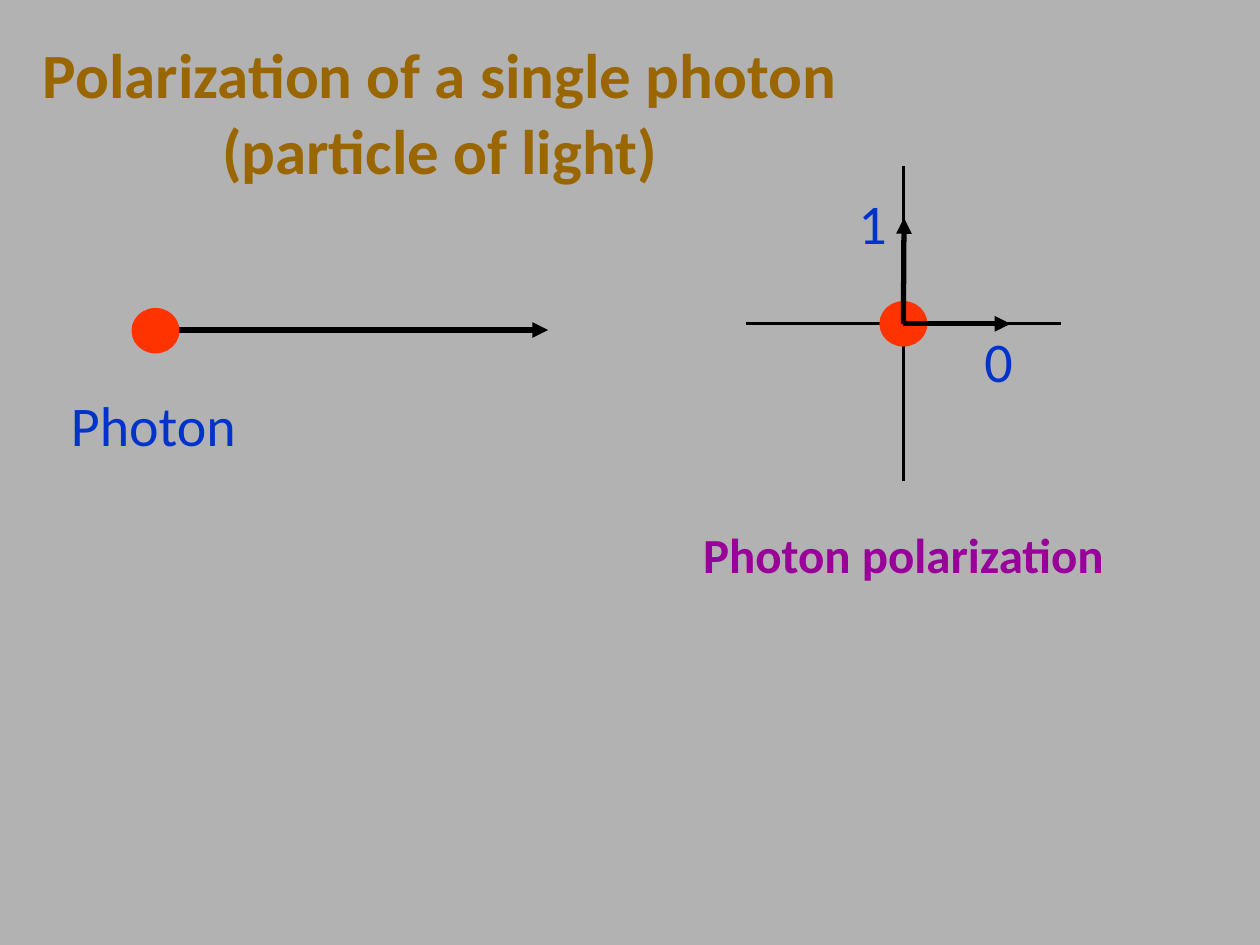
from dataclasses import dataclass

from pptx import Presentation
from pptx.dml.color import RGBColor
from pptx.enum.shapes import MSO_CONNECTOR, MSO_SHAPE
from pptx.enum.text import MSO_ANCHOR, MSO_AUTO_SIZE, PP_ALIGN
from pptx.oxml.ns import qn
from pptx.util import Inches, Pt
from lxml.etree import SubElement


@dataclass(frozen=True)
class Theme:
    font: str = "Calibri"
    back: str = "B2B2B2"
    head: str = "996600"
    label: str = "0033CC"
    note: str = "990099"
    dot: str = "FF3300"
    ink: str = "000000"
    head_size: int = 36
    label_size: int = 32
    note_size: int = 28
    thin: float = 1.5
    rim: float = 2.25
    thick: float = 3


THEME = Theme()
WIDE, HIGH = 10, 7.5


@dataclass(frozen=True)
class Box:
    x: float
    y: float
    w: float
    h: float

    def area(self, x, y, w, h):
        """Box at the given shares of this one."""
        return Box(self.x + x * self.w, self.y + y * self.h, w * self.w, h * self.h)

    def point(self, x, y):
        return Inches(self.x + x * self.w), Inches(self.y + y * self.h)

    def frame(self):
        return [Inches(n) for n in (self.x, self.y, self.w, self.h)]


def write(frame, text, size, color, bold=False, wrap=False):
    frame.text = text
    frame.word_wrap = wrap
    frame.vertical_anchor = MSO_ANCHOR.TOP
    para = frame.paragraphs[0]
    para.alignment = PP_ALIGN.CENTER
    font = para.runs[0].font
    font.name, font.size, font.bold = THEME.font, Pt(size), bold
    font.color.rgb = RGBColor.from_string(color)


def label(shapes, box, text, size=THEME.label_size, color=THEME.label, bold=False):
    item = shapes.add_textbox(*box.frame())
    write(item.text_frame, text, size, color, bold)
    item.text_frame.auto_size = MSO_AUTO_SIZE.SHAPE_TO_FIT_TEXT


def line(shapes, start, end, width, arrow=False):
    item = shapes.add_connector(MSO_CONNECTOR.STRAIGHT, *start, *end)
    item.line.width = Pt(width)
    item.line.color.rgb = RGBColor.from_string(THEME.ink)
    props = item._element.spPr
    if arrow:
        SubElement(props.find(qn("a:ln")), qn("a:tailEnd"), type="triangle")
    SubElement(props, qn("a:effectLst"))


def photon(shapes, box):
    item = shapes.add_shape(MSO_SHAPE.OVAL, *box.frame())
    item.shadow.inherit = False
    item.fill.solid()
    item.line.width = Pt(THEME.rim)
    for paint in (item.fill.fore_color, item.line.color):
        paint.rgb = RGBColor.from_string(THEME.dot)


def heading(slide, box):
    title = slide.shapes.title
    title.left, title.top, title.width, title.height = box.frame()
    write(title.text_frame, "Polarization of a single photon (particle of light)",
          THEME.head_size, THEME.head, bold=True, wrap=True)
    title.text_frame.auto_size = MSO_AUTO_SIZE.NONE


def flight(shapes, box):
    # Moving photon, with its name below
    line(shapes, box.point(0.2, 0.13), box.point(1, 0.13), THEME.thick, arrow=True)
    photon(shapes, box.area(0.154, 0, 0.09, 0.27))
    label(shapes, box.area(0, 0.48, 0.39, 0.52), "Photon")


def axes(shapes, box):
    # Crossed axes
    line(shapes, box.point(0, 0.5), box.point(1, 0.5), THEME.thin)
    line(shapes, box.point(0.5, 1), box.point(0.5, 0), THEME.thin)
    photon(shapes, box.area(0.43, 0.434, 0.14, 0.132))
    # Basis states
    for digit, tip, x, y in (("0", (0.84, 0.5), 0.716, 0.488),
                             ("1", (0.502, 0.164), 0.316, 0.052)):
        line(shapes, box.point(0.5, 0.5), box.point(*tip), THEME.thick, arrow=True)
        label(shapes, box.area(x, y, 0.172, 0.256), digit)


def main():
    deck = Presentation()
    deck.slide_width, deck.slide_height = Inches(WIDE), Inches(HIGH)
    slide = deck.slides.add_slide(deck.slide_layouts[5])
    fill = slide.background.fill
    fill.solid()
    fill.fore_color.rgb = RGBColor.from_string(THEME.back)

    page = Box(0, 0, WIDE, HIGH)
    heading(slide, page.area(0.019, 0.031, 0.66, 0.175))
    flight(slide.shapes, page.area(0.046, 0.328, 0.389, 0.163))
    label(slide.shapes, page.area(0.546, 0.548, 0.342, 0.076), "Photon polarization",
          THEME.note_size, THEME.note, bold=True)
    axes(slide.shapes.add_group_shape().shapes, page.area(0.592, 0.176, 0.25, 1 / 3))
    deck.save("out.pptx")


if __name__ == "__main__":
    main()
